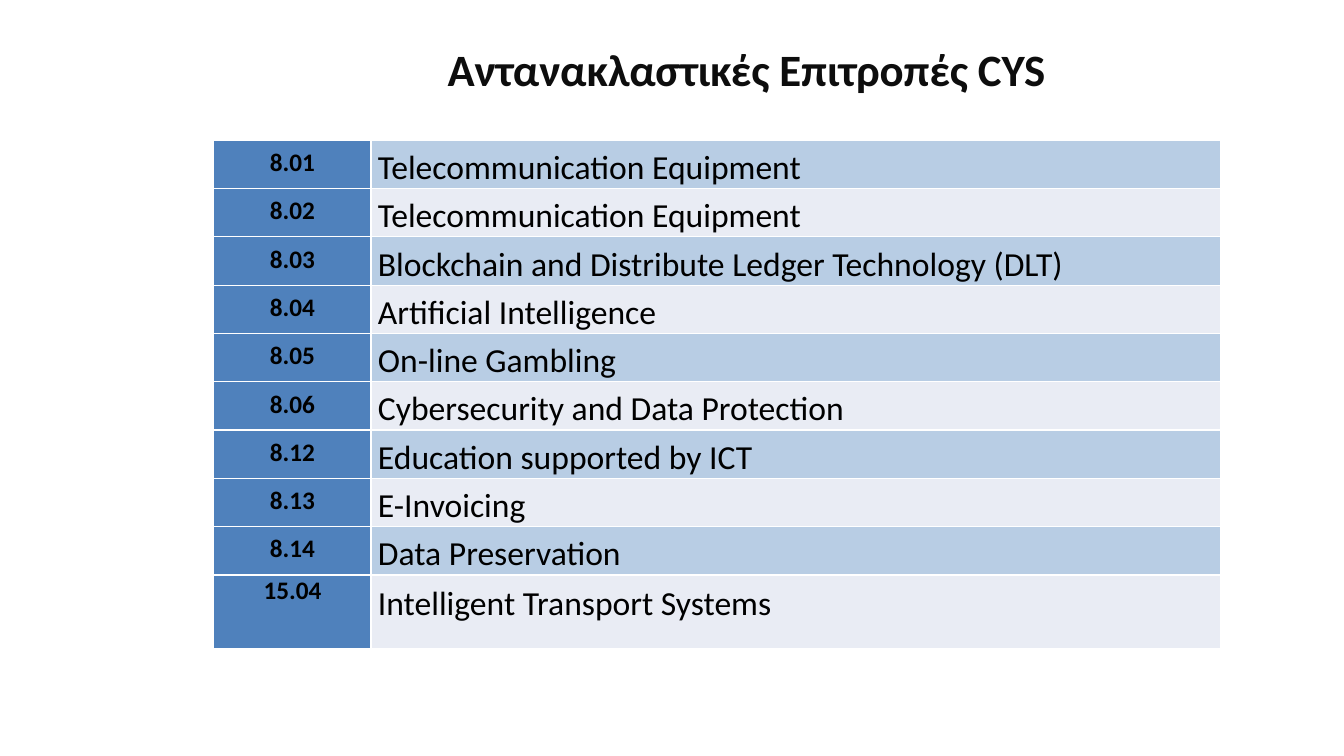
from dataclasses import dataclass

from lxml.etree import SubElement
from pptx import Presentation
from pptx.dml.color import RGBColor
from pptx.enum.text import MSO_ANCHOR, PP_ALIGN
from pptx.oxml.ns import qn
from pptx.util import Pt


@dataclass(frozen=True)
class Theme:
    font: str = "Calibri"
    title: str = "0D0D0D"
    ink: str = "000000"
    code: str = "4F81BC"
    bands: tuple = ("B8CDE4", "E9ECF4")
    rule: str = "FFFFFF"
    head: int = 32
    mark: int = 18
    body: int = 24


THEME = Theme()
TITLE = "Αντανακλαστικές Επιτροπές CYS"
GROUPS = [
    ("8.01", "Telecommunication Equipment"),
    ("8.02", "Telecommunication Equipment"),
    ("8.03", "Blockchain and Distribute Ledger Technology (DLT)"),
    ("8.04", "Artificial Intelligence"),
    ("8.05", "On-line Gambling"),
    ("8.06", "Cybersecurity and Data Protection"),
    ("8.12", "Education supported by ICT"),
    ("8.13", "E-Invoicing"),
    ("8.14", "Data Preservation"),
    ("15.04", "Intelligent Transport Systems"),
]


def style(para, size, color, bold):
    for run in para.runs:
        font = run.font
        font.name, font.size, font.bold = THEME.font, Pt(size), bold
        font.color.rgb = RGBColor.from_string(color)


def inset(box, left, top, right, bottom):
    box.margin_left, box.margin_top = Pt(left), Pt(top)
    box.margin_right, box.margin_bottom = Pt(right), Pt(bottom)


def add_title(slide):
    shape = slide.shapes.title
    shape.left, shape.top = Pt(311.8), Pt(30.2)
    shape.width, shape.height = Pt(538.6), Pt(44.6)
    frame = shape.text_frame
    frame.word_wrap = True
    frame.vertical_anchor = MSO_ANCHOR.MIDDLE
    inset(frame, 7.9, 1, 7.2, 3.6)
    frame.text = TITLE
    para = frame.paragraphs[0]
    para.alignment = PP_ALIGN.LEFT
    para.line_spacing = 0.9
    style(para, THEME.head, THEME.title, True)
    para.runs[0].font._element.set("spc", "-10")


def add_rules(cell, widths):
    # Border lines must come before the cell fill
    props = cell._tc.get_or_add_tcPr()
    for side, width in widths.items():
        line = SubElement(props, qn(f"a:ln{side}"), w=str(Pt(width)))
        fill = SubElement(line, qn("a:solidFill"))
        SubElement(fill, qn("a:srgbClr"), val=THEME.rule)


def fill_cell(cell, text, color, size, bold, top, widths):
    add_rules(cell, widths)
    cell.fill.solid()
    cell.fill.fore_color.rgb = RGBColor.from_string(color)
    cell.vertical_anchor = MSO_ANCHOR.TOP
    inset(cell, 0, top, 0, 0)
    cell.text_frame.text = text
    para = cell.text_frame.paragraphs[0]
    style(para, size, THEME.ink, bold)
    return para


def add_groups(slide):
    count = len(GROUPS)
    frame = slide.shapes.add_table(
        count, 2, Pt(152.8), Pt(100.2), Pt(719.2), Pt(344))
    table = frame.table
    table.first_row = table.horz_banding = False
    table.columns[0].width, table.columns[1].width = Pt(112.2), Pt(607)
    for i, (code, name) in enumerate(GROUPS):
        last = i == count - 1
        table.rows[i].height = Pt(52.4 if last else 32.4)
        base = {} if last else {"B": 1}

        # Committee number
        para = fill_cell(table.cell(i, 0), code, THEME.code, THEME.mark, True,
                         0.6 if last else 5.2,
                         {"L": 0.75, "R": 1, "T": 1} | base)
        para.alignment = PP_ALIGN.CENTER

        # Committee name
        para = fill_cell(table.cell(i, 1), name, THEME.bands[i % 2],
                         THEME.body, False, 1.9 if last else 5.2,
                         {"L": 1, "R": 0.5, "T": 1} | base)
        para.alignment = PP_ALIGN.LEFT
        para._p.get_or_add_pPr().set("marL", str(Pt(5)))
        if last:
            para.line_spacing = 1.15


def main():
    deck = Presentation()
    deck.slide_width, deck.slide_height = Pt(960), Pt(540)
    slide = deck.slides.add_slide(deck.slide_layouts[5])
    add_title(slide)
    add_groups(slide)
    deck.save("out.pptx")


if __name__ == "__main__":
    main()
